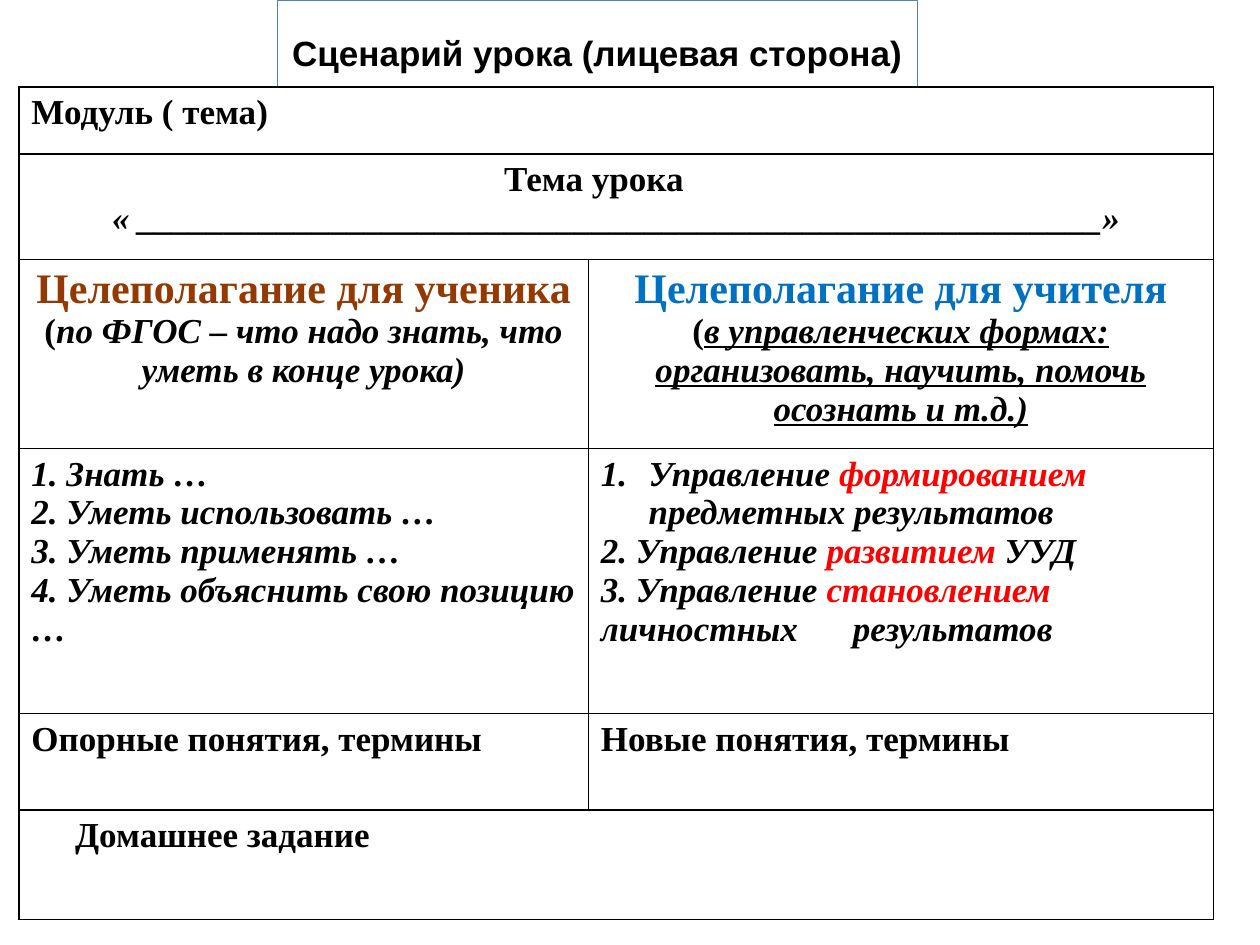
from lxml.etree import SubElement
from pptx import Presentation
from pptx.dml.color import RGBColor
from pptx.enum.text import MSO_ANCHOR, MSO_AUTO_SIZE, PP_ALIGN
from pptx.oxml.ns import qn
from pptx.util import Cm, Pt

COLORS = {"black": "000000", "white": "FFFFFF", "frame": "4F81BD",
          "student": "943A00", "teacher": "0070C0", "red": "FF0000"}

STYLES = {
    "plain": {},
    "italic": {"italic": True},
    "underlined": {"italic": True, "underline": True},
    "red": {"italic": True, "color": "red"},
    "student": {"size": 24, "color": "student"},
    "teacher": {"size": 24, "color": "teacher"},
}

TITLE = "Сценарий урока (лицевая сторона)"
CENTER = {"align": PP_ALIGN.CENTER}

ROWS = [
    (1.35, [[({}, [("Модуль ( тема)", "plain")])]]),
    (2.13, [[
        (CENTER, [("Тема урока", "plain")]),
        ({**CENTER, "left": 0.9}, [("« " + "_" * 55 + "»", "italic")]),
    ]]),
    (3.8, [
        [(CENTER, [("Целеполагание для ученика ", "student"), ("(", "plain"),
                   ("по ФГОС – что надо знать, что уметь в конце урока)", "italic")])],
        [(CENTER, [("Целеполагание для учителя", "teacher")]),
         (CENTER, [("(", "plain"),
                   ("в управленческих формах: организовать, научить, "
                    "помочь осознать и т.д.)", "underlined")])],
    ]),
    (5.34, [
        [({}, [("1. Знать …", "italic")]),
         ({}, [("2. Уметь использовать …", "italic")]),
         ({}, [("3. Уметь применять …", "italic")]),
         ({}, [("4. Уметь объяснить свою позицию …", "italic")])],
        [({"left": 0.96, "first": -0.96, "numbered": True},
          [("Управление", "italic"), (" формированием ", "red"),
           ("предметных результатов", "italic")]),
         ({}, [("2. Управление ", "italic"), ("развитием", "red"), (" УУД", "italic")]),
         ({"tab": 4.85}, [("3. Управление ", "italic"), ("становлением ", "red"),
                          ("личностных\tрезультатов", "italic")])],
    ]),
    (1.95, [[({}, [("Опорные понятия, термины", "plain")])],
            [({}, [("Новые понятия, термины", "plain")])]]),
    (2.2, [[({"left": 0.88}, [("Домашнее задание", "plain")])]]),
]
COLUMN_WIDTHS = [11.48, 12.6]
TOPIC_ROW = 1


def color(name):
    return RGBColor.from_string(COLORS[name])


def add_span(para, text, font_name, style):
    span = para.add_run()
    span.text = text
    font = span.font
    font.name = font_name
    font.bold = True
    font.size = Pt(style.get("size", 20))
    font.italic = style.get("italic", False)
    font.underline = style.get("underline", False)
    font.color.rgb = color(style.get("color", "black"))


def format_paragraph(para, options):
    para.alignment = options.get("align", PP_ALIGN.LEFT)
    properties = para._p.get_or_add_pPr()
    properties.set("marL", str(Cm(options.get("left", 0))))
    properties.set("indent", str(Cm(options.get("first", 0))))
    if options.get("numbered"):
        SubElement(properties, qn("a:buFont"), typeface="+mj-lt")
        SubElement(properties, qn("a:buAutoNum"), type="arabicPeriod")
    if "tab" in options:
        tabs = SubElement(properties, qn("a:tabLst"))
        SubElement(tabs, qn("a:tab"), pos=str(Cm(options["tab"])), algn="l")


def format_cell(cell):
    properties = cell._tc.get_or_add_tcPr()
    for side in ("lnL", "lnR", "lnT", "lnB"):
        border = SubElement(properties, qn(f"a:{side}"), w=str(Pt(1)))
        fill = SubElement(border, qn("a:solidFill"))
        SubElement(fill, qn("a:srgbClr"), val=COLORS["black"])
    cell.fill.solid()
    cell.fill.fore_color.rgb = color("white")


def add_title(page):
    box = page.shapes.title
    box.left, box.top, box.width, box.height = Cm(5.59), Cm(0.51), Cm(12.9), Cm(1.11)
    box.fill.solid()
    box.fill.fore_color.rgb = color("white")
    box.line.color.rgb = color("frame")
    box.line.width = Pt(0.75)
    frame = box.text_frame
    frame.word_wrap = False
    frame.auto_size = MSO_AUTO_SIZE.SHAPE_TO_FIT_TEXT
    frame.vertical_anchor = MSO_ANCHOR.MIDDLE
    para = frame.paragraphs[0]
    para.alignment = PP_ALIGN.CENTER
    add_span(para, TITLE, "Arial", {})


def add_lesson_table(page):
    heights = [height for height, _ in ROWS]
    table = page.shapes.add_table(
        len(ROWS), len(COLUMN_WIDTHS), Cm(0.38), Cm(1.75),
        Cm(sum(COLUMN_WIDTHS)), Cm(sum(heights))).table
    table.first_row = False
    table.horz_banding = False
    for column, width in zip(table.columns, COLUMN_WIDTHS):
        column.width = Cm(width)
    for index, (height, contents) in enumerate(ROWS):
        table.rows[index].height = Cm(height)
        for cell in table.rows[index].cells:
            format_cell(cell)
        if len(contents) == 1:
            table.cell(index, 0).merge(table.cell(index, 1))
        for position, paragraphs in enumerate(contents):
            frame = table.cell(index, position).text_frame
            for number, (options, spans) in enumerate(paragraphs):
                para = frame.add_paragraph() if number else frame.paragraphs[0]
                format_paragraph(para, options)
                for text, style in spans:
                    add_span(para, text, "Times New Roman", STYLES[style])
    table.cell(TOPIC_ROW, 0).margin_right = Cm(1.15)


def main():
    deck = Presentation()
    deck.slide_width, deck.slide_height = Cm(25.4), Cm(19.05)
    page = deck.slides.add_slide(deck.slide_layouts[5])
    add_title(page)
    add_lesson_table(page)
    deck.save("out.pptx")


if __name__ == "__main__":
    main()
